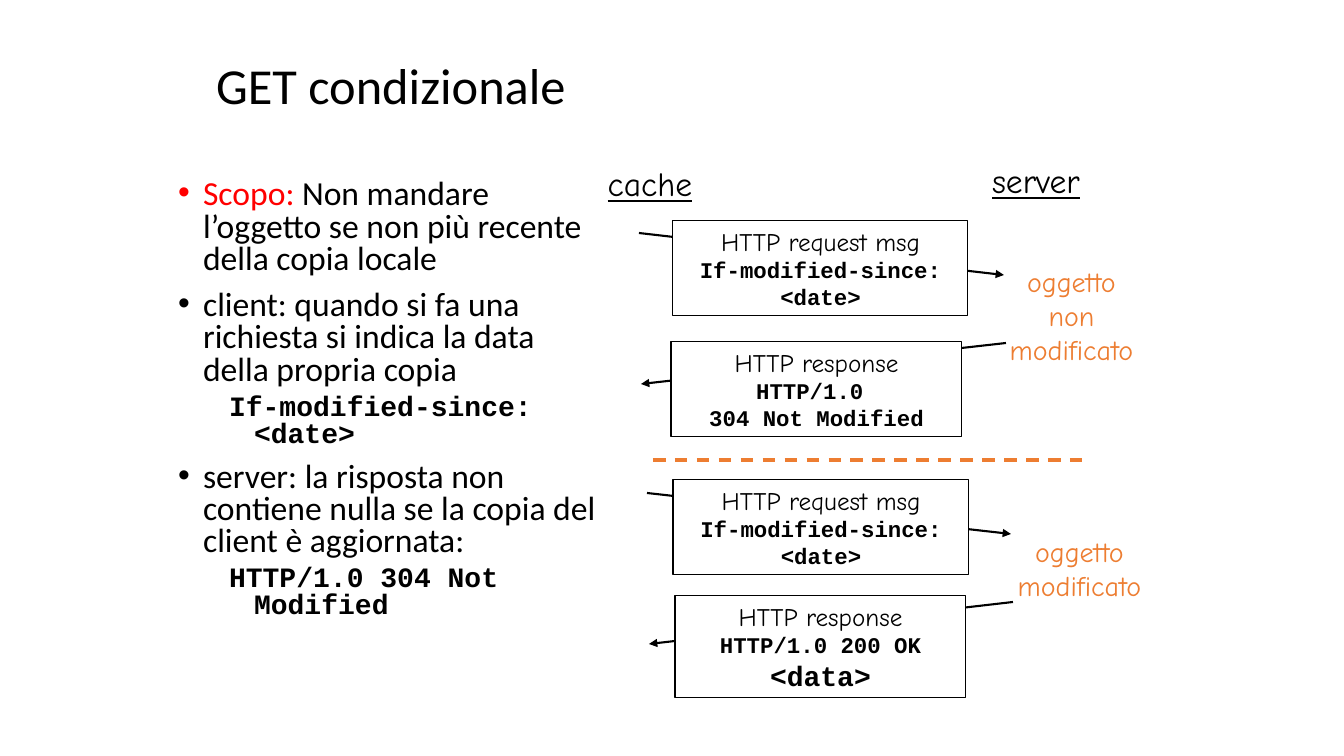
from dataclasses import dataclass

from lxml.etree import SubElement
from pptx import Presentation
from pptx.dml.color import RGBColor
from pptx.enum.dml import MSO_LINE
from pptx.enum.shapes import MSO_CONNECTOR, MSO_SHAPE
from pptx.enum.text import MSO_ANCHOR as Anchor, MSO_AUTO_SIZE as AutoSize, PP_ALIGN as Align
from pptx.oxml.ns import qn
from pptx.util import Pt

PX = 914400 / 100.8


@dataclass(frozen=True)
class Theme:
    black: RGBColor = RGBColor(0, 0, 0)
    white: RGBColor = RGBColor(255, 255, 255)
    red: RGBColor = RGBColor(255, 0, 0)
    orange: RGBColor = RGBColor(0xED, 0x7D, 0x31)
    sans: str = "Calibri"
    hand: str = "Comic Neue"
    code: str = "Courier New"
    title: int = 36
    text: int = 24
    label: int = 20
    message: int = 18
    header: int = 16


theme = Theme()


def px(*lengths):
    """Turn whole pixels into EMU."""
    return [round(length * PX) for length in lengths]


def write(frame, lines, color=theme.black, underline=None):
    """Fill a text frame with centred (text, font, size) lines."""
    for index, (text, name, size) in enumerate(lines):
        paragraph = frame.paragraphs[0] if index == 0 else frame.add_paragraph()
        paragraph.text = text
        paragraph.alignment = Align.CENTER
        font = paragraph.font
        font.name, font.size, font.underline = name, Pt(size), underline
        font.bold = name == theme.code
        font.color.rgb = color


presentation = Presentation()
presentation.slide_width, presentation.slide_height = px(1344, 756)
slide = presentation.slides.add_slide(presentation.slide_layouts[1])
shapes = slide.shapes

# Title
title = shapes.title
title.left, title.top, title.width, title.height = px(206, 25, 878, 126)
title.text_frame.auto_size = AutoSize.NONE
title.text_frame.vertical_anchor = Anchor.MIDDLE
paragraph = title.text_frame.paragraphs[0]
paragraph.text = "GET condizionale"
paragraph.alignment = Align.LEFT
paragraph.line_spacing = 0.9
paragraph.font.name, paragraph.font.size = theme.sans, Pt(theme.title)
paragraph.font.color.rgb = theme.black

# Bulleted explanation, with the protocol lines one level down
body = slide.placeholders[1]
body.left, body.top, body.width, body.height = px(168, 175, 446, 475)
body.text_frame.auto_size = AutoSize.NONE
points = [
    (0, [("Scopo:", theme.red),
         (" Non mandare l’oggetto se non più recente della copia locale", theme.black)]),
    (0, [("client: quando si fa una richiesta si indica la data della propria copia", theme.black)]),
    (1, [("If-modified-since: <date>", theme.black)]),
    (0, [("server: la risposta non contiene nulla se la copia del client è aggiornata:", theme.black)]),
    (1, [("HTTP/1.0 304 Not Modified", theme.black)]),
]
for index, (level, runs) in enumerate(points):
    paragraph = body.text_frame.paragraphs[0] if index == 0 else body.text_frame.add_paragraph()
    paragraph.level = level
    paragraph.line_spacing = 0.8
    paragraph.space_before = Pt(5 if level else 10)
    font = paragraph.font
    font.name = theme.code if level else theme.sans
    font.size = Pt(theme.label if level else theme.text)
    font.bold = level == 1
    for text, color in runs:
        run = paragraph.add_run()
        run.text = text
        run.font.color.rgb = color
    properties = paragraph._p.get_or_add_pPr()
    margin, indent = px(76 if level else 25, -25)
    properties.set("marL", str(margin))
    properties.set("indent", str(indent))
    bullet = properties.makeelement(qn("a:buNone" if level else "a:buChar"))
    if level == 0:
        bullet.set("char", "•")
    properties.find(qn("a:defRPr")).addprevious(bullet)

# Messages: arrow ends, box, lines
request = [("HTTP request msg", theme.hand, theme.message),
           ("If-modified-since: <date>", theme.code, theme.header)]
response = ("HTTP response", theme.hand, theme.message)
messages = [
    ((639, 233, 1004, 275), (673, 221, 295, 95), request),
    ((1006, 343, 641, 384), (671, 342, 291, 95),
     [response, ("HTTP/1.0 ", theme.code, theme.header),
      ("304 Not Modified", theme.code, theme.header)]),
    ((647, 493, 1011, 534), (673, 480, 296, 95), request),
    ((1013, 602, 649, 644), (675, 596, 291, 102),
     [response, ("HTTP/1.0 200 OK", theme.code, theme.header),
      ("<data>", theme.code, theme.label)]),
]
divider_ends = (653, 460, 1084, 460)
for ends in [message[0] for message in messages] + [divider_ends]:
    connector = shapes.add_connector(MSO_CONNECTOR.STRAIGHT, *px(*ends))
    SubElement(connector._element.spPr, qn("a:effectLst"))
    line = connector.line
    if ends == divider_ends:
        line.color.rgb = theme.orange
        line.width = Pt(2.25)
        line.dash_style = MSO_LINE.DASH
    else:
        line.color.rgb = theme.black
        line.width = Pt(1.5)
        SubElement(line._get_or_add_ln(), qn("a:tailEnd"), type="triangle")

for _, bounds, lines in messages:
    box = shapes.add_shape(MSO_SHAPE.RECTANGLE, *px(*bounds))
    box.shadow.inherit = False
    box.fill.solid()
    box.fill.fore_color.rgb = theme.white
    box.line.color.rgb = theme.black
    box.line.width = Pt(0.75)
    box.text_frame.vertical_anchor = Anchor.TOP
    box.text_frame.auto_size = AutoSize.SHAPE_TO_FIT_TEXT
    write(box.text_frame, lines)

# Column headings and outcomes
labels = [
    ((595, 158, 110, 50), ["cache"], theme.text, theme.black, True),
    ((975, 155, 122, 50), ["server"], theme.text, theme.black, True),
    ((992, 260, 159, 111), ["oggetto", "non", "modificato"], theme.label, theme.orange, None),
    ((1000, 530, 159, 78), ["oggetto\vmodificato"], theme.label, theme.orange, None),
]
for bounds, texts, size, color, underline in labels:
    frame = shapes.add_textbox(*px(*bounds)).text_frame
    frame.word_wrap = False
    frame.auto_size = AutoSize.SHAPE_TO_FIT_TEXT
    write(frame, [(text, theme.hand, size) for text in texts], color, underline)

presentation.save("out.pptx")
